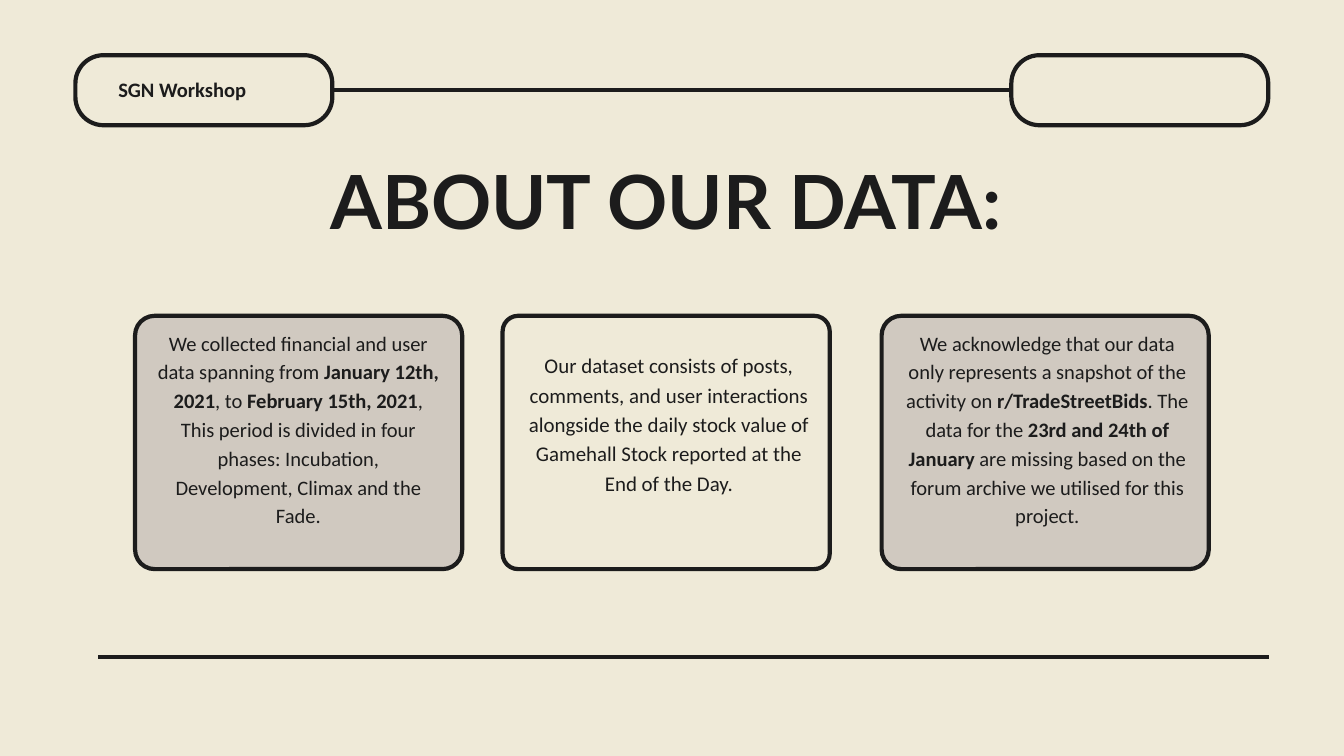
"""Build the "About our data" slide with header pills and three text cards."""
from pptx import Presentation
from pptx import util as u
from pptx.dml.color import RGBColor
from pptx.enum import shapes, text
from pptx.oxml.ns import qn
from lxml import etree

INK, CREAM, TAUPE = "1C1C1C", "EFEAD8", "D0C9C0"
LINE_WIDTH = 4.5
TITLE = "ABOUT OUR DATA:"
HEADER = "SGN Workshop"

CARD_TOP, CARD_WIDTH, CARD_HEIGHT = 338.4, 350.5, 271.4
CARDS = [
    {
        "left": 144.7, "fill": TAUPE, "radius": 20.9,
        "box": (168.5, 349.9, 302.4, 245.5), "size": 22, "spacing": 30.8,
        "runs": [
            ("We collected financial and user data spanning from ", False),
            ("January 12th, 2021", True),
            (", to ", False),
            ("February 15th, 2021", True),
            (", This period is divided in four phases: Incubation, "
             "Development, Climax and the Fade.", False),
        ],
    },
    {
        "left": 538.5, "fill": CREAM, "radius": 16.6,
        "box": (565.2, 373.7, 303.1, 187.2), "size": 22.4, "spacing": 31.4,
        "runs": [
            ("Our dataset consists of posts, comments, and user interactions "
             "alongside the daily stock value of Gamehall Stock reported at "
             "the End of the Day.", False),
        ],
    },
    {
        "left": 944.6, "fill": TAUPE, "radius": 20.9,
        "box": (967, 349.9, 310.3, 245.5), "size": 22, "spacing": 30.8,
        "runs": [
            ("We acknowledge that our data only represents a snapshot of the "
             "activity on ", False),
            ("r/TradeStreetBids", True),
            (". The data for the ", False),
            ("23rd and 24th of January ", True),
            ("are missing based on the forum archive we utilised for this "
             "project.", False),
        ],
    },
]

PILL_LEFTS = (80.8, 1083.6)
PILL_TOP, PILL_WIDTH, PILL_HEIGHT, PILL_RADIUS = 59.1, 275.3, 75.1, 30.2
RULE_LEFT, RULE_RIGHT, RULE_Y = 105.1, 1359.2, 704.2


def color(value):
    return RGBColor.from_string(value)


def points(*values):
    return [u.Pt(value) for value in values]


def write(shape, runs, size, spacing, font="Calibri", align=text.PP_ALIGN.CENTER):
    frame = shape.text_frame
    frame.word_wrap = True
    frame.auto_size = text.MSO_AUTO_SIZE.NONE
    frame.vertical_anchor = text.MSO_ANCHOR.TOP
    frame.margin_left = frame.margin_right = 0
    frame.margin_top = frame.margin_bottom = 0
    paragraph = frame.paragraphs[0]
    paragraph.alignment = align
    paragraph.line_spacing = u.Pt(spacing)
    paragraph.space_before = u.Pt(0)
    for words, bold in runs:
        run = paragraph.add_run()
        run.text = words
        run.font.name = font
        run.font.size = u.Pt(size)
        run.font.bold = bold
        run.font.color.rgb = color(INK)


def add_panel(slide, box, radius, fill):
    shape = slide.shapes.add_shape(
        shapes.MSO_SHAPE.ROUNDED_RECTANGLE, *points(*box))
    shape.adjustments[0] = radius / min(box[2:])
    shape.shadow.inherit = False
    shape.fill.solid()
    shape.fill.fore_color.rgb = color(fill)
    shape.line.color.rgb = color(INK)
    shape.line.width = u.Pt(LINE_WIDTH)
    return shape


def add_line(slide, *ends):
    connector = slide.shapes.add_connector(
        shapes.MSO_CONNECTOR.STRAIGHT, *points(*ends))
    connector.line.color.rgb = color(INK)
    connector.line.width = u.Pt(LINE_WIDTH)
    properties = connector._element.find(qn("p:spPr"))
    etree.SubElement(properties, qn("a:effectLst"))
    return connector


def main():
    presentation = Presentation()
    presentation.slide_width, presentation.slide_height = points(1440, 810)
    slide = presentation.slides.add_slide(presentation.slide_layouts[5])
    slide.background.fill.solid()
    slide.background.fill.fore_color.rgb = color(CREAM)

    title = slide.shapes.title
    title.left, title.top, title.width, title.height = points(205.9, 181.4, 1015.9, 90)
    write(title, [(TITLE, True)], size=80, spacing=80, font="Lato")

    for card in CARDS:
        add_panel(slide, (card["left"], CARD_TOP, CARD_WIDTH, CARD_HEIGHT),
                  card["radius"], card["fill"])
        write(slide.shapes.add_textbox(*points(*card["box"])),
              card["runs"], size=card["size"], spacing=card["spacing"])

    first, last = [
        add_panel(slide, (left, PILL_TOP, PILL_WIDTH, PILL_HEIGHT), PILL_RADIUS, CREAM)
        for left in PILL_LEFTS]
    middle = PILL_TOP + PILL_HEIGHT / 2
    link = add_line(slide, PILL_LEFTS[0] + PILL_WIDTH, middle, PILL_LEFTS[1], middle)
    link.begin_connect(first, 3)
    link.end_connect(last, 1)
    write(slide.shapes.add_textbox(*points(126.7, 86.4, 183.6, 23)),
          [(HEADER, True)], size=22, spacing=22, align=text.PP_ALIGN.LEFT)

    add_line(slide, RULE_LEFT, RULE_Y, RULE_RIGHT, RULE_Y)
    presentation.save("out.pptx")


if __name__ == "__main__":
    main()
